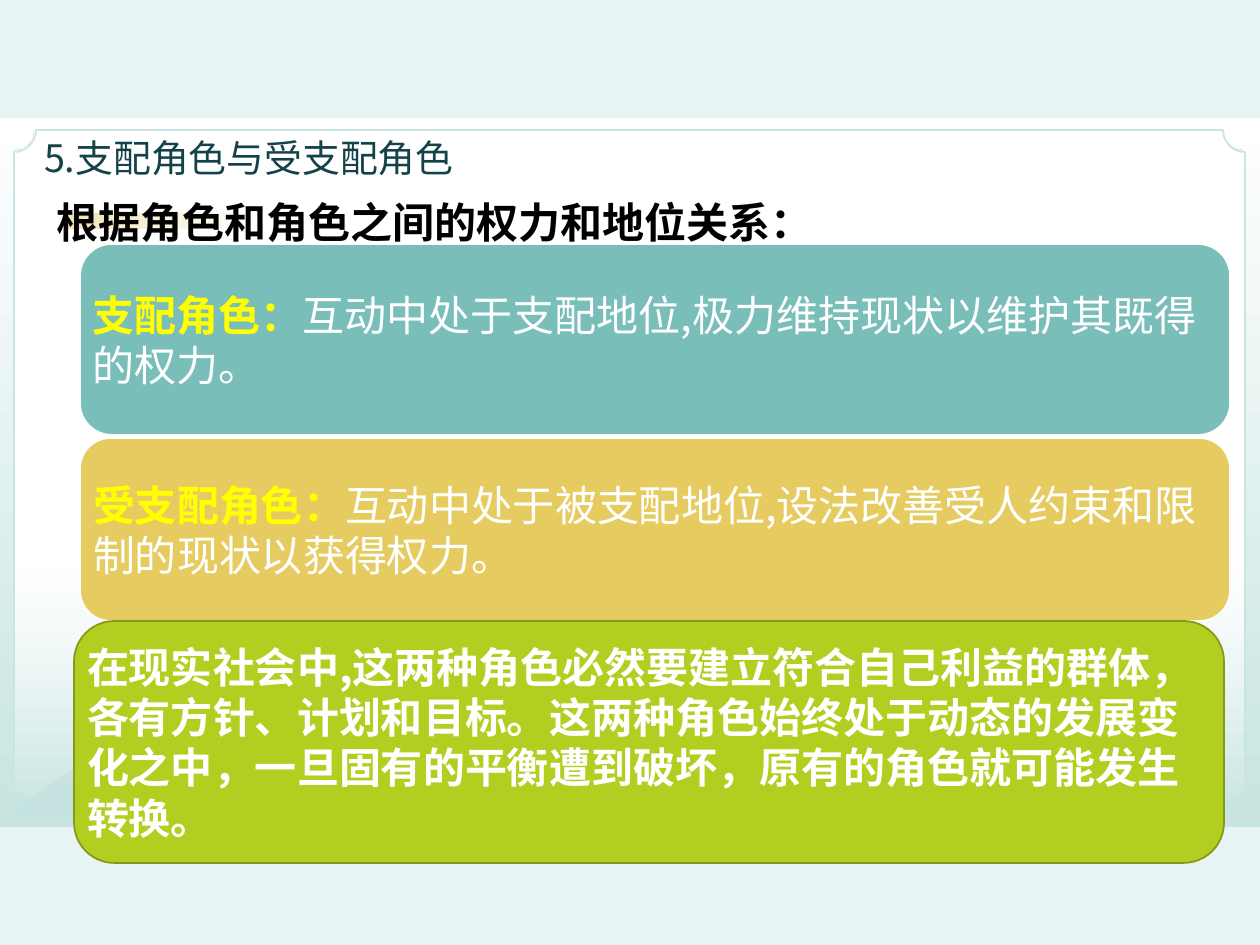
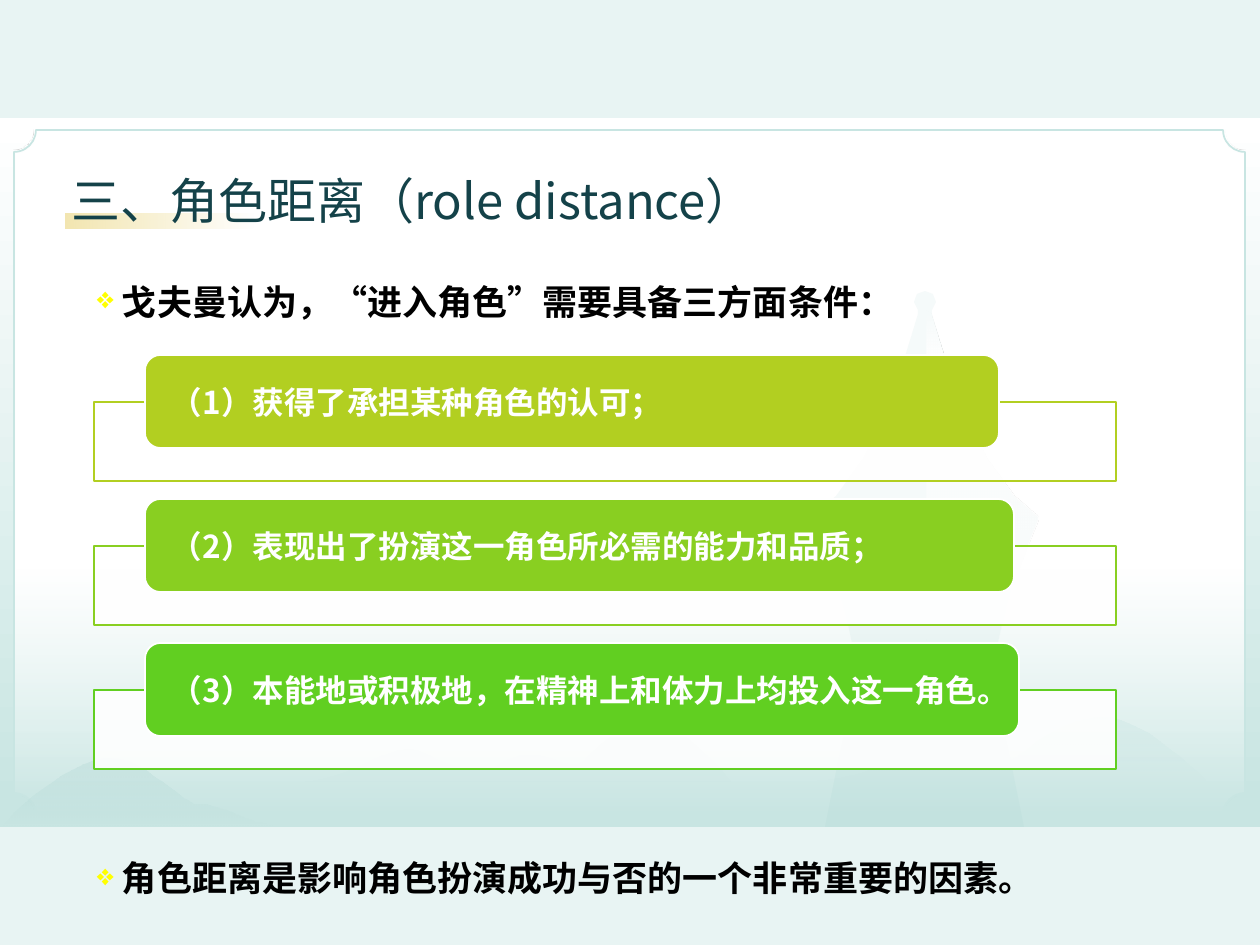
from lxml import etree
from pptx import Presentation
from pptx import util as u
from pptx.dml.color import RGBColor
from pptx.enum import shapes, text
from pptx.oxml.ns import qn

SCALE = 914400 / 126  # EMU in one px
FONT = "Noto Sans CJK SC"
COLORS = {
    "page": "E8F4F3", "white": "FFFFFF", "black": "000000", "mist": "C8E5E2",
    "title": "144249", "gold": "E6CC60", "teal": "7ABEBA", "deep_teal": "4CA19F",
    "hill": "B5DCDB", "yellow": "FFFF00", "lime": "B2CF21", "olive": "849918",
    "leaf": "89CF21", "green": "61CF21",
}
SHAPE = shapes.MSO_SHAPE
ANCHOR = text.MSO_ANCHOR
CORNER = 0.1667 * 0.2929  # text margin of a rounded corner, per unit of height

# Hills: right-hand foot, then the control points of each curve to the left
LEFT_HILL = [(281, 827),
             (281, 827), (249, 821), (238, 815), (227, 810), (212, 804), (197, 804),
             (184, 806), (146, 759), (111, 759), (76, 757), (25, 799), (0, 827)]
MIDDLE_HILL = [(732, 781),
               (732, 781), (685, 723), (653, 722), (620, 721), (596, 748), (586, 757),
               (580, 764), (577, 767), (546, 756), (527, 750), (509, 756), (498, 764),
               (488, 771), (451, 767), (433, 756), (416, 745), (396, 746), (359, 765),
               (330, 779), (301, 781), (301, 781)]
RIGHT_HILL = [(1206, 781),
              (1206, 781), (1145, 718), (1104, 718), (1061, 717), (1029, 746), (1017, 756),
              (1009, 761), (1004, 766), (982, 753), (960, 741), (932, 743), (885, 764),
              (848, 779), (811, 781), (811, 781)]

# Tower: distance from the axis and height on the page, top to bottom
TOWER_AXIS = 925
TOWER_BALL = [(0, 291), (8, 294), (11, 302), (7, 310)]
TOWER_ROOF = [(7, 314), (13, 334), (22, 363), (41, 417), (62, 459), (89, 496), (113, 517),
              (113, 520), (100, 552), (89, 583), (79, 615), (71, 652)]


def px(value):
    return u.Emu(round(value * SCALE))


def rgb(name):
    return RGBColor.from_string(COLORS[name])


# Fills and outlines
def set_alpha(color_element, percent):
    etree.SubElement(color_element, qn("a:alpha")).set("val", str(percent * 1000))


def fill_solid(shape, color, alpha=100):
    shape.fill.solid()
    shape.fill.fore_color.rgb = rgb(color)
    if alpha < 100:
        set_alpha(shape._element.spPr.find(qn("a:solidFill"))[0], alpha)


def fill_gradient(shape, stops, angle=270):
    """Each stop is (position %, colour, opacity %)."""
    shape.fill.gradient()
    shape.fill.gradient_angle = angle
    stop_list = shape._element.spPr.find(qn("a:gradFill")).find(qn("a:gsLst"))
    for old_stop in list(stop_list):
        stop_list.remove(old_stop)
    for position, color, alpha in stops:
        stop = etree.SubElement(stop_list, qn("a:gs"))
        stop.set("pos", str(position * 1000))
        color_element = etree.SubElement(stop, qn("a:srgbClr"))
        color_element.set("val", COLORS[color])
        set_alpha(color_element, alpha)


def set_outline(shape, color=None):
    shape.shadow.inherit = False
    if color:
        shape.line.color.rgb = rgb(color)
        shape.line.width = u.Pt(1)
    else:
        shape.line.fill.background()


# Shapes
def add_preset(slide, kind, box, line=None, adjustment=None):
    shape = slide.shapes.add_shape(kind, *map(px, box))
    if adjustment is not None:
        shape.adjustments[0] = adjustment
    set_outline(shape, line)
    return shape


def add_outline_shape(slide, points):
    builder = slide.shapes.build_freeform(*points[0], scale=SCALE)
    builder.add_line_segments(points[1:], close=True)
    shape = builder.convert_to_shape()
    set_outline(shape)
    return shape


def trace_curves(controls, steps=12):
    points = controls[:1]
    for i in range(1, len(controls), 3):
        curve = [points[-1], *controls[i:i + 3]]
        for step in range(1, steps + 1):
            t = step / steps
            weights = ((1 - t) ** 3, 3 * t * (1 - t) ** 2, 3 * t * t * (1 - t), t ** 3)
            points.append(tuple(sum(w * p[axis] for w, p in zip(weights, curve))
                                for axis in (0, 1)))
    return points


def add_hill(slide, controls, color, alpha):
    hill = add_outline_shape(slide, trace_curves(controls))
    fill_gradient(hill, [(0, color, alpha), (100, color, 0)])


# Text
def write_runs(paragraph, runs, size):
    """Each run is (words, colour, bold)."""
    for words, color, bold in runs:
        run = paragraph.add_run()
        run.text = words
        run.font.size = u.Pt(size)
        run.font.name = FONT
        run.font.bold = bold
        run.font.color.rgb = rgb(color)
        properties = run._r.get_or_add_rPr()
        etree.SubElement(properties, qn("a:ea")).set("typeface", FONT)


def set_frame(shape, anchor, side=0, top=0):
    frame = shape.text_frame
    frame.word_wrap = True
    frame.vertical_anchor = anchor
    frame.margin_left = frame.margin_right = px(side)
    frame.margin_top = frame.margin_bottom = px(top)
    frame.paragraphs[0].alignment = text.PP_ALIGN.LEFT
    return frame.paragraphs[0]


def add_title(slide, words, box, size):
    paragraph = set_frame(slide.shapes.add_textbox(*map(px, box)), ANCHOR.BOTTOM)
    write_runs(paragraph, [(words, "title", False)], size)


def add_statement(slide, words, box, size):
    textbox = slide.shapes.add_textbox(*map(px, box))
    paragraph = set_frame(textbox, ANCHOR.TOP, 13, 6)
    paragraph.line_spacing = 1.5
    write_runs(paragraph, [(words, "black", True)], size)
    return paragraph


def add_bullet_statement(slide, words, box):
    paragraph = add_statement(slide, words, box, 20)
    paragraph.space_before = u.Pt(4)
    properties = paragraph._p.get_or_add_pPr()
    properties.set("marL", str(px(25)))
    properties.set("indent", str(-px(25)))
    bullet_color = etree.SubElement(properties, qn("a:buClr"))
    etree.SubElement(bullet_color, qn("a:srgbClr")).set("val", COLORS["yellow"])
    etree.SubElement(properties, qn("a:buSzPct")).set("val", "85000")
    etree.SubElement(properties, qn("a:buChar")).set("char", "❖")


def add_card(slide, box, color, line, runs, size, side):
    card = add_preset(slide, SHAPE.ROUNDED_RECTANGLE, box, line)
    fill_solid(card, color)
    paragraph = set_frame(card, ANCHOR.MIDDLE, side - CORNER * box[3])
    write_runs(paragraph, runs, size)


# Shared scenery
def add_tower(slide):
    half = TOWER_BALL + TOWER_ROOF
    right = [(TOWER_AXIS + x, y) for x, y in half]
    left = [(TOWER_AXIS - x, y) for x, y in reversed(half[1:])]
    fill_solid(add_outline_shape(slide, right + left), "deep_teal", 5)

    lit_side = [(TOWER_AXIS + 2, 311), *right[len(TOWER_BALL):], (TOWER_AXIS + 2, 652)]
    fill_gradient(add_outline_shape(slide, lit_side),
                  [(0, "white", 0), (14, "white", 100), (97, "white", 0)])

    base = add_preset(slide, SHAPE.TRAPEZOID, (825, 669, 199, 158), adjustment=0.2)
    fill_solid(base, "deep_teal", 4)


def add_slide(presentation):
    slide = presentation.slides.add_slide(presentation.slide_layouts[6])
    slide.background.fill.solid()
    slide.background.fill.fore_color.rgb = rgb("page")

    band = add_preset(slide, SHAPE.RECTANGLE, (0, 118, 1260, 709))
    fill_gradient(band, [(0, "white", 100), (97, "mist", 100)])
    frame = add_preset(slide, SHAPE.PLAQUE, (14, 130, 1231, 685), "mist", 0.032)
    fill_gradient(frame, [(64, "white", 100), (100, "white", 0)])
    highlight = add_preset(slide, SHAPE.RECTANGLE, (66, 214, 189, 15))
    fill_gradient(highlight, [(0, "gold", 0), (100, "gold", 50)], 180)
    add_hill(slide, LEFT_HILL, "deep_teal", 10)
    return slide


# Slides
def build_dominance_slide(presentation):
    slide = add_slide(presentation)
    roles = [
        (244, 191, "teal", "支配角色：", "互动中处于支配地位,极力维持现状以维护其既得的权力。"),
        (438, 183, "gold", "受支配角色：",
         "互动中处于被支配地位,设法改善受人约束和限制的现状以获得权力。"),
    ]
    for top, height, color, role, meaning in roles:
        add_card(slide, (80, top, 1150, height), color, "white",
                 [(role, "yellow", True), (meaning, "white", False)], 24, 13)
    summary = ("在现实社会中,这两种角色必然要建立符合自己利益的群体，各有方针、计划和目标。"
               "这两种角色始终处于动态的发展变化之中，一旦固有的平衡遭到破坏，"
               "原有的角色就可能发生转换。")
    add_card(slide, (74, 621, 1150, 242), "lime", "olive",
             [(summary, "white", True)], 24, 13)
    add_statement(slide, "根据角色和角色之间的权力和地位关系：", (44, 165, 1131, 89), 24)
    add_title(slide, "5.支配角色与受支配角色", (44, 106, 1116, 74), 21.6)


def build_distance_slide(presentation):
    slide = add_slide(presentation)
    add_hill(slide, RIGHT_HILL, "hill", 20)
    add_hill(slide, MIDDLE_HILL, "hill", 30)
    add_tower(slide)

    statements = [(254, "戈夫曼认为，“进入角色”需要具备三方面条件："),
                  (830, "角色距离是影响角色扮演成功与否的一个非常重要的因素。")]
    for top, words in statements:
        add_bullet_statement(slide, words, (84, top, 1116, 90))

    conditions = [
        (854, "lime", "（1）获得了承担某种角色的认可；"),
        (869, "leaf", "（2）表现出了扮演这一角色所必需的能力和品质；"),
        (874, "green", "（3）本能地或积极地，在精神上和体力上均投入这一角色。"),
    ]
    for i, (width, color, words) in enumerate(conditions):
        offset = 144 * i
        tray = add_preset(slide, SHAPE.RECTANGLE, (94, 402 + offset, 1022, 79), color)
        fill_solid(tray, "white", 90)
        add_card(slide, (145, 355 + offset, width, 93), color, "white",
                 [(words, "white", True)], 18, 26)
    add_title(slide, "三、角色距离（role distance）", (72, 155, 1116, 74), 28)


def main():
    presentation = Presentation()
    presentation.slide_width = px(1260)
    presentation.slide_height = px(945)
    build_dominance_slide(presentation)
    build_distance_slide(presentation)
    presentation.save("out.pptx")


if __name__ == "__main__":
    main()
